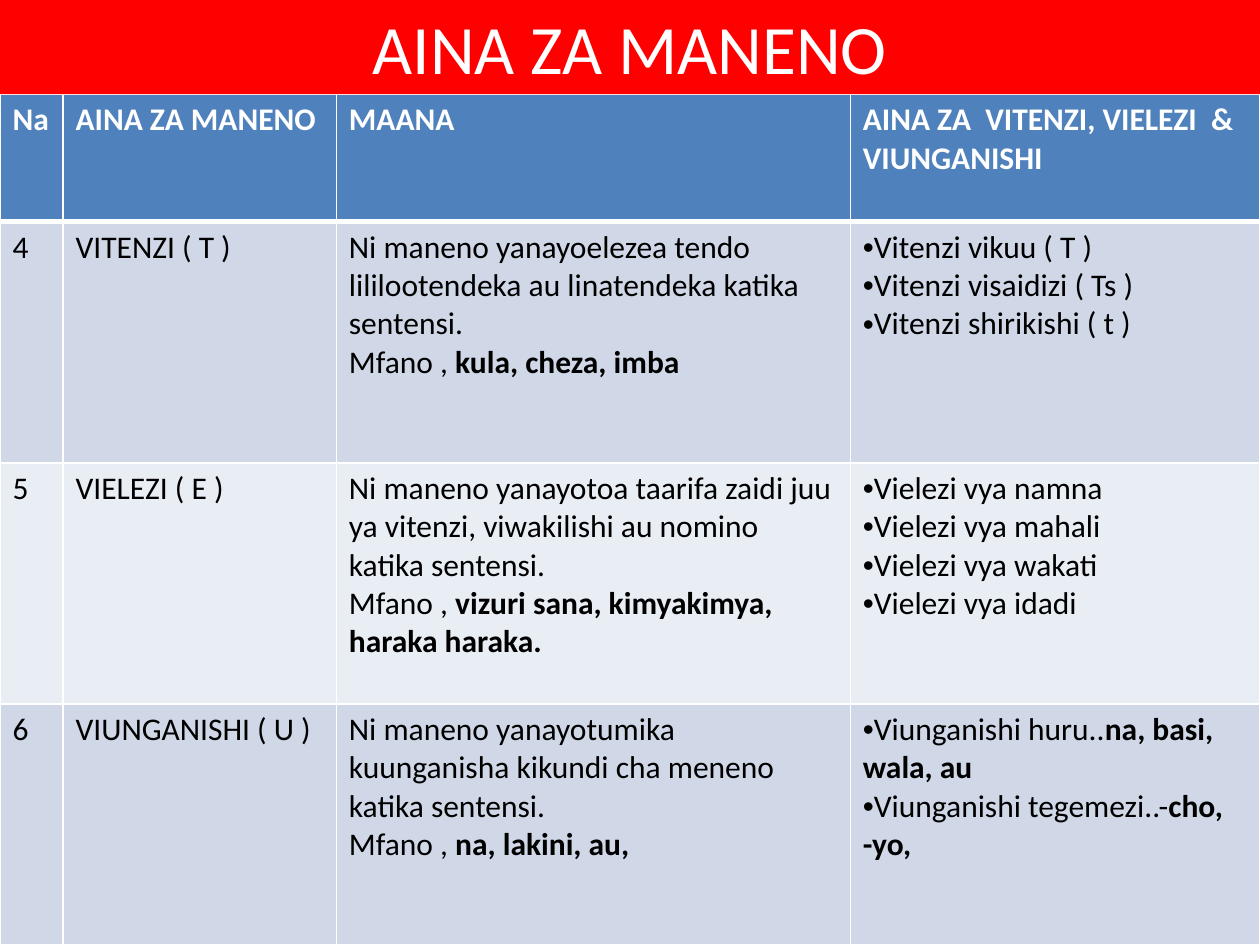
from lxml import etree
from pptx import Presentation
from pptx.dml.color import RGBColor
from pptx.enum.shapes import MSO_SHAPE
from pptx.enum.text import MSO_ANCHOR, PP_ALIGN
from pptx.oxml.ns import qn
from pptx.util import Cm, Pt

RECTANGLE = MSO_SHAPE.RECTANGLE
MIDDLE = MSO_ANCHOR.MIDDLE
CENTER = PP_ALIGN.CENTER

WHITE = RGBColor(0xFF, 0xFF, 0xFF)
BLACK = RGBColor(0x00, 0x00, 0x00)
RED = RGBColor(0xFF, 0x00, 0x00)
HEADER_BLUE = RGBColor(0x4F, 0x81, 0xBD)
BAND_DARK = RGBColor(0xD0, 0xD8, 0xE8)
BAND_LIGHT = RGBColor(0xE9, 0xED, 0xF4)

FONT = "Calibri"
SLIDE_WIDTH, SLIDE_HEIGHT = Cm(25.4), Cm(19.05)
TITLE_HEIGHT = Cm(1.9)
COLUMN_WIDTHS = [Cm(1.27), Cm(5.51), Cm(10.36), Cm(8.26)]
ROW_HEIGHTS = [Cm(2.57)] + [Cm(4.86)] * 3

HEADINGS = ["Na", "AINA ZA MANENO", "MAANA",
            "AINA ZA  VITENZI, VIELEZI  &  VIUNGANISHI"]

# Number, word class, meaning, examples, kinds as (plain, bold) pairs
WORD_CLASSES = [
    ("4", "VITENZI ( T )",
     "Ni maneno yanayoelezea tendo lililootendeka au linatendeka katika sentensi.",
     "kula, cheza, imba",
     [("Vitenzi vikuu ( T )", ""), ("Vitenzi visaidizi ( Ts )", ""),
      ("Vitenzi shirikishi ( t )", "")]),
    ("5", "VIELEZI ( E )",
     "Ni maneno yanayotoa taarifa zaidi juu ya vitenzi, viwakilishi au nomino "
     "katika sentensi.",
     "vizuri sana, kimyakimya, haraka haraka.",
     [("Vielezi vya namna", ""), ("Vielezi vya mahali", ""),
      ("Vielezi vya wakati", ""), ("Vielezi vya idadi", "")]),
    ("6", "VIUNGANISHI ( U )",
     "Ni maneno yanayotumika kuunganisha kikundi cha meneno katika sentensi.",
     "na, lakini, au,",
     [("Viunganishi huru..", "na, basi, wala, au"),
      ("Viunganishi tegemezi..-", "cho, -yo,")]),
]


def add_span(para, text, size, color, bold=False):
    span = para.add_run()
    span.text = text
    span.font.name = FONT
    span.font.size = Pt(size)
    span.font.bold = bold
    span.font.color.rgb = color


def add_bullet(para):
    properties = para._p.get_or_add_pPr()
    properties.set("marL", "0")
    properties.set("indent", "0")
    etree.SubElement(properties, qn("a:buFont"), typeface="Arial")
    etree.SubElement(properties, qn("a:buChar"), char="•")


def set_borders(cell, bottom_width):
    properties = cell._tc.get_or_add_tcPr()
    widths = {"a:lnL": 1, "a:lnR": 1, "a:lnT": 1, "a:lnB": bottom_width}
    for side, width in widths.items():
        line = etree.SubElement(properties, qn(side), w=str(Pt(width)))
        fill = etree.SubElement(line, qn("a:solidFill"))
        etree.SubElement(fill, qn("a:srgbClr"), val=str(WHITE))


def fill_cell(cell, paragraphs, fill, color=BLACK, bulleted=False, bottom_width=1):
    """Write paragraphs given as (plain, bold) pairs and style the cell."""
    set_borders(cell, bottom_width)
    cell.fill.solid()
    cell.fill.fore_color.rgb = fill
    frame = cell.text_frame
    for index, (plain, strong) in enumerate(paragraphs):
        para = frame.paragraphs[0] if index == 0 else frame.add_paragraph()
        if bulleted:
            add_bullet(para)
        if plain:
            add_span(para, plain, 18, color)
        if strong:
            add_span(para, strong, 18, color, bold=True)


def add_word_table(page):
    table = page.shapes.add_table(
        len(ROW_HEIGHTS), len(COLUMN_WIDTHS), 0, TITLE_HEIGHT,
        SLIDE_WIDTH, sum(ROW_HEIGHTS)).table
    for column, width in zip(table.columns, COLUMN_WIDTHS):
        column.width = width
    for row, height in zip(table.rows, ROW_HEIGHTS):
        row.height = height

    # Header row
    for column, heading in enumerate(HEADINGS):
        fill_cell(table.cell(0, column), [("", heading)], HEADER_BLUE, WHITE,
                  bottom_width=3)

    # Banded body rows
    for row, (number, name, meaning, examples, kinds) in enumerate(WORD_CLASSES, 1):
        band = BAND_DARK if row % 2 else BAND_LIGHT
        contents = [[(number, "")], [(name, "")],
                    [(meaning, ""), ("Mfano , ", examples)], kinds]
        for column, paragraphs in enumerate(contents):
            fill_cell(table.cell(row, column), paragraphs, band,
                      bulleted=paragraphs is kinds)


def add_title(page):
    box = page.shapes.add_shape(RECTANGLE, 0, 0, SLIDE_WIDTH, TITLE_HEIGHT)
    box.shadow.inherit = False
    box.fill.solid()
    box.fill.fore_color.rgb = RED
    box.line.fill.background()
    box.text_frame.word_wrap = True
    box.text_frame.vertical_anchor = MIDDLE
    para = box.text_frame.paragraphs[0]
    para.alignment = CENTER
    add_span(para, "AINA ZA MANENO", 39.6, WHITE)


def main():
    deck = Presentation()
    deck.slide_width, deck.slide_height = SLIDE_WIDTH, SLIDE_HEIGHT
    page = deck.slides.add_slide(deck.slide_layouts[6])
    add_word_table(page)
    add_title(page)
    deck.save("out.pptx")


if __name__ == "__main__":
    main()
